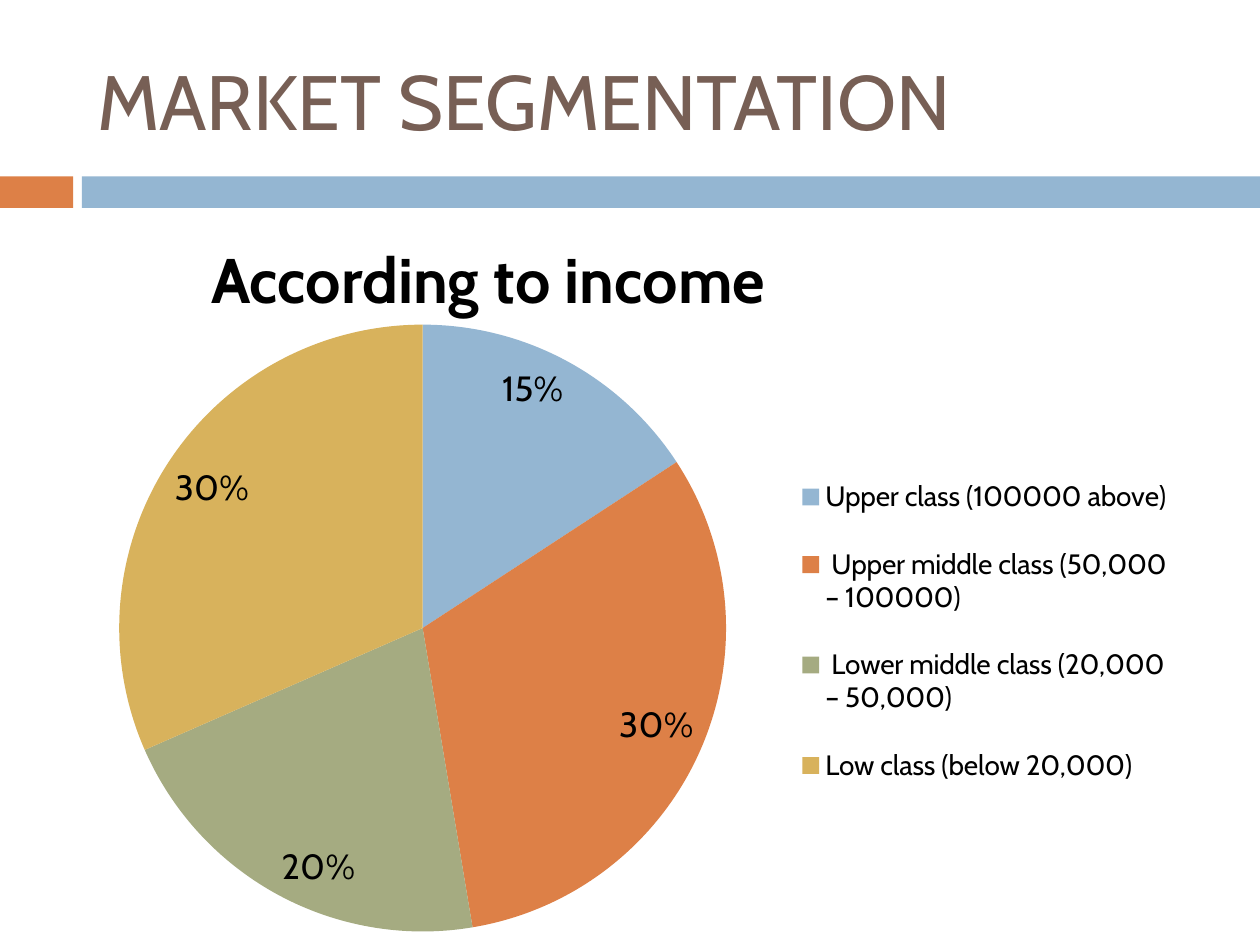
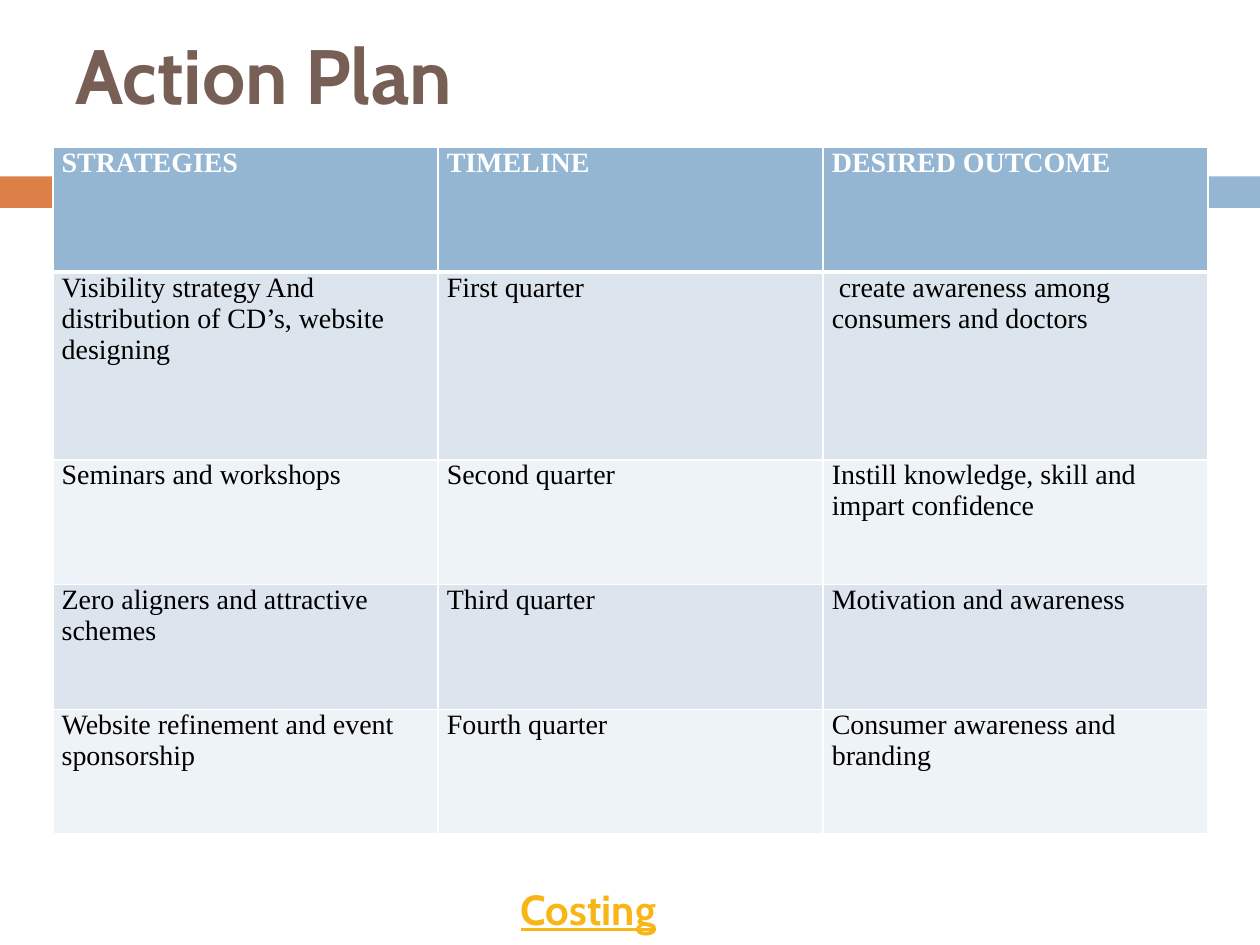
from dataclasses import dataclass

from lxml import etree
from pptx import Presentation
from pptx.chart.data import CategoryChartData
from pptx.dml.color import RGBColor
from pptx.enum.chart import XL_CHART_TYPE, XL_LABEL_POSITION, XL_LEGEND_POSITION
from pptx.enum.shapes import MSO_SHAPE
from pptx.enum.text import MSO_ANCHOR, MSO_AUTO_SIZE, PP_ALIGN
from pptx.oxml import parse_xml
from pptx.oxml.ns import nsdecls, qn
from pptx.util import Inches, Pt

RECT = MSO_SHAPE.RECTANGLE
PIE = XL_CHART_TYPE.PIE
INSIDE_END = XL_LABEL_POSITION.INSIDE_END
LEGEND_RIGHT = XL_LEGEND_POSITION.RIGHT
LEFT, CENTER = PP_ALIGN.LEFT, PP_ALIGN.CENTER
TOP, MIDDLE = MSO_ANCHOR.TOP, MSO_ANCHOR.MIDDLE
NO_AUTOFIT = MSO_AUTO_SIZE.NONE
TITLE_ONLY = 5

# Shared theme
SANS, SERIF = "Cabin", "Times New Roman"
BLUE, ORANGE, GREEN, GOLD = "94B6D2", "DD8047", "A5AB81", "D8B25C"
BROWN, AMBER, BLACK, WHITE = "775F55", "F7B615", "000000", "FFFFFF"
ROW_TINTS = ("DCE5EE", "EEF3F7")


@dataclass(frozen=True)
class Box:
    left: float
    top: float
    width: float
    height: float

    def emu(self) -> tuple:
        return tuple(Inches(v) for v in (self.left, self.top, self.width, self.height))


@dataclass(frozen=True)
class Style:
    size: float
    color: str
    font: str = SANS
    bold: bool = False
    underline: bool = False


@dataclass(frozen=True)
class Band:
    box: Box
    color: str


BANDS = (
    Band(Box(0, 1.4, 0.58, 0.25), ORANGE),
    Band(Box(0.65, 1.4, 9.35, 0.25), BLUE),
)

# Slide content
INCOME_CLASSES = (
    ("Upper class (100000 above)", 0.15, BLUE),
    (" Upper middle class (50,000 – 100000)", 0.30, ORANGE),
    (" Lower middle class (20,000 – 50,000)", 0.20, GREEN),
    ("Low class (below 20,000)", 0.30, GOLD),
)
PLAN_ROWS = (
    ("STRATEGIES", "TIMELINE", "DESIRED OUTCOME"),
    ("Visibility strategy And distribution of CD’s, website designing",
     "First quarter", " create awareness among consumers and doctors"),
    ("Seminars and workshops", "Second quarter",
     "Instill knowledge, skill and impart confidence"),
    ("Zero aligners and attractive schemes", "Third quarter",
     "Motivation and awareness"),
    ("Website refinement and event sponsorship", "Fourth quarter",
     "Consumer awareness and branding"),
)
ROW_HEIGHTS = (0.99, 1.49, 0.99, 0.99, 0.99)


def rgb(color: str) -> RGBColor:
    return RGBColor.from_string(color)


def style_font(font, style: Style) -> None:
    font.name, font.size = style.font, Pt(style.size)
    font.bold, font.underline = style.bold, style.underline
    font.color.rgb = rgb(style.color)


def set_text(tf, text: str, style: Style, align=LEFT) -> None:
    tf.text = text
    p = tf.paragraphs[0]
    p.alignment = align
    style_font(p.runs[0].font, style)


def new_slide(prs, title: str, box: Box, bold: bool = False):
    """Add a slide with the two bands and a styled title."""
    s = prs.slides.add_slide(prs.slide_layouts[TITLE_ONLY])
    for band in BANDS:
        sp = s.shapes.add_shape(RECT, *band.box.emu())
        sp.shadow.inherit = False
        sp.fill.solid()
        sp.fill.fore_color.rgb = rgb(band.color)
        sp.line.fill.background()
    sp = s.shapes.title
    sp.left, sp.top, sp.width, sp.height = box.emu()
    tf = sp.text_frame
    tf.auto_size, tf.vertical_anchor = NO_AUTOFIT, MIDDLE
    set_text(tf, title, Style(44, BROWN, bold=bold))
    return s


def add_caption(s, text: str, box: Box, style: Style) -> None:
    tf = s.shapes.add_textbox(*box.emu()).text_frame
    tf.word_wrap, tf.vertical_anchor = True, MIDDLE
    set_text(tf, text, style, CENTER)


def place_chart_part(parent, after: str, box: Box, inner: bool = False) -> None:
    """Fix a chart part at fractions of the chart area, after the named child."""
    for old in parent.findall(qn("c:layout")):
        parent.remove(old)
    layout = etree.Element(qn("c:layout"))
    manual = etree.SubElement(layout, qn("c:manualLayout"))
    target = [("layoutTarget", "inner")] if inner else []
    values = [("xMode", "edge"), ("yMode", "edge"), ("x", box.left),
              ("y", box.top), ("w", box.width), ("h", box.height)]
    for tag, value in target + values:
        etree.SubElement(manual, qn(f"c:{tag}")).set("val", str(value))
    anchor = parent.find(qn(after)) if after else None
    if anchor is None:
        parent.insert(0, layout)
    else:
        anchor.addnext(layout)


def add_income_pie(s, box: Box) -> None:
    data = CategoryChartData(number_format="0%")
    names, shares, colors = zip(*INCOME_CLASSES)
    data.categories = names
    data.add_series("Series 1", shares)
    chart = s.shapes.add_chart(PIE, *box.emu(), data).chart
    chart.has_title = False
    style_font(chart.font, Style(10, BLACK))

    chart.has_legend = True
    legend = chart.legend
    legend.position, legend.include_in_layout = LEGEND_RIGHT, False
    style_font(legend.font, Style(16, BLACK))

    plot = chart.plots[0]
    plot.vary_by_categories = True
    for i, color in enumerate(colors):
        fill = plot.series[0].points[i].format.fill
        fill.solid()
        fill.fore_color.rgb = rgb(color)
    plot.has_data_labels = True
    labels = plot.data_labels
    labels.show_value, labels.position = True, INSIDE_END
    labels.number_format, labels.number_format_is_linked = "0%", False
    style_font(labels.font, Style(20, BLACK))

    area = chart.element.find(".//" + qn("c:plotArea"))
    place_chart_part(area, "", Box(0.05, 0.03, 0.54, 0.95), inner=True)
    key = chart.element.find(".//" + qn("c:legend"))
    place_chart_part(key, "c:legendPos", Box(0.65, 0.22, 0.34, 0.58))


def set_borders(cell, top: float, bottom: float) -> None:
    tc_pr = cell._tc.get_or_add_tcPr()
    widths = {"lnL": 1, "lnR": 1, "lnT": top, "lnB": bottom}
    for i, (tag, width) in enumerate(widths.items()):
        tc_pr.insert(i, parse_xml(
            f'<a:{tag} {nsdecls("a")} w="{Pt(width)}"><a:solidFill>'
            f'<a:srgbClr val="{WHITE}"/></a:solidFill></a:{tag}>'))


def add_plan_table(s, box: Box) -> None:
    table = s.shapes.add_table(len(PLAN_ROWS), len(PLAN_ROWS[0]), *box.emu()).table
    for column in table.columns:
        column.width = Inches(box.width / len(PLAN_ROWS[0]))
    for r, (texts, height) in enumerate(zip(PLAN_ROWS, ROW_HEIGHTS)):
        header = r == 0
        table.rows[r].height = Inches(height)
        style = Style(16, WHITE if header else BLACK, SERIF, bold=header)
        for c, text in enumerate(texts):
            cell = table.cell(r, c)
            cell.margin_left = cell.margin_right = Inches(0.07)
            cell.margin_top = cell.margin_bottom = 0
            cell.vertical_anchor = TOP
            cell.fill.solid()
            cell.fill.fore_color.rgb = rgb(BLUE if header else ROW_TINTS[(r - 1) % 2])
            set_borders(cell, top=3 if r == 1 else 1, bottom=3 if header else 1)
            set_text(cell.text_frame, text, style)


def main() -> None:
    prs = Presentation()
    prs.slide_width, prs.slide_height = Inches(10), Inches(7.5)

    # Market segmentation
    s = new_slide(prs, "MARKET SEGMENTATION", Box(0.67, 0.25, 8.92, 1.08))
    add_income_pie(s, Box(0.5, 2.42, 8.92, 5.08))
    add_caption(s, "According to income", Box(1.25, 1.92, 5.25, 0.58),
                Style(36, BLACK, bold=True))

    # Action plan
    s = new_slide(prs, "Action Plan", Box(0.5, 0, 9, 1.17), bold=True)
    add_plan_table(s, Box(0.42, 1.17, 9.17, 5.45))
    add_caption(s, "Costing", Box(3.67, 6.92, 2, 0.58),
                Style(24, AMBER, bold=True, underline=True))

    prs.save("out.pptx")


if __name__ == "__main__":
    main()
